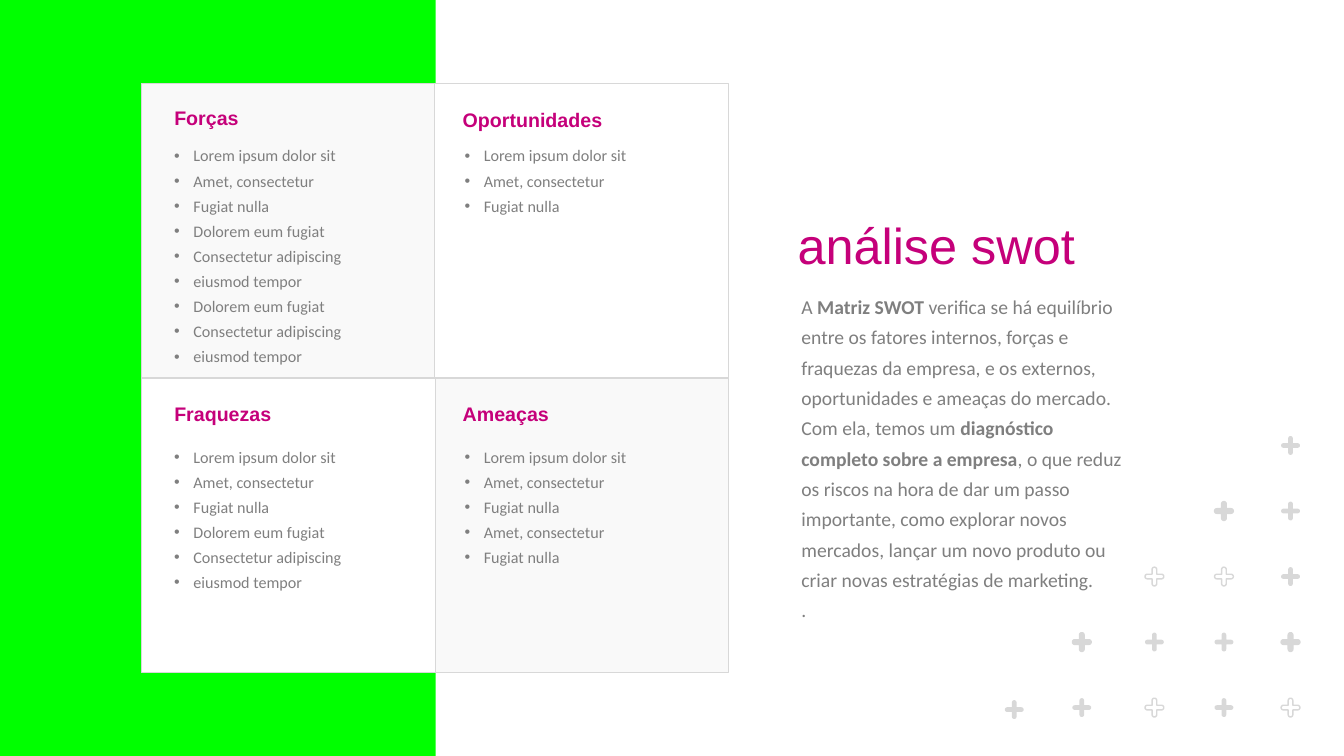
"""Builds the SWOT analysis slide."""
import math

from lxml import etree
from pptx import Presentation
from pptx.dml.color import RGBColor
from pptx.enum.shapes import MSO_SHAPE
from pptx.enum.text import MSO_ANCHOR, MSO_AUTO_SIZE, PP_ALIGN
from pptx.oxml.ns import qn
from pptx.util import Inches, Pt

RECT = MSO_SHAPE.RECTANGLE
TOP = MSO_ANCHOR.TOP
LEFT = PP_ALIGN.LEFT
NO_FIT = MSO_AUTO_SIZE.NONE

GREEN = RGBColor(0x00, 0xFF, 0x00)
MAGENTA = RGBColor(0xC5, 0x00, 0x7A)
GRAY = RGBColor(0x7F, 0x7F, 0x7F)
SILVER = RGBColor(0xD8, 0xD8, 0xD8)
PALE = RGBColor(0xF9, 0xF9, 0xF9)
WHITE = RGBColor(0xFF, 0xFF, 0xFF)

LOREM = ["Lorem ipsum dolor sit", "Amet, consectetur", "Fugiat nulla"]
DOLOREM = ["Dolorem eum fugiat", "Consectetur adipiscing", "eiusmod tempor"]
QUADRANTS = [
    ("Forças", 0, 0, PALE, 1.02, LOREM + DOLOREM * 2),
    ("Oportunidades", 1, 0, WHITE, 1.04, LOREM),
    ("Ameaças", 1, 1, PALE, 3.96, LOREM + LOREM[1:]),
    ("Fraquezas", 0, 1, WHITE, 3.96, LOREM + DOLOREM),
]
BODY = [
    [("A ", False), ("Matriz SWOT ", True),
     ("verifica se há equilíbrio entre os fatores internos, forças e fraquezas "
      "da empresa, e os externos, oportunidades e ameaças do mercado. "
      "Com ela, temos um ", False),
     ("diagnóstico completo sobre a empresa", True),
     (", o que reduz os riscos na hora de dar um passo importante, como explorar "
      "novos mercados, lançar um novo produto ou criar novas estratégias de "
      "marketing.", False)],
    [(".", False)],
]
CROSS_STYLES = {"p": (SILVER, None), "b": (SILVER, SILVER), "o": (WHITE, SILVER)}
CROSS_COLUMNS = [10.73, 11.45, 12.14, 12.8]
CROSS_ROWS = ["...p", "..bp", ".oop", "bppb", "popo"]


class SlideBuilder:
    """Holds the slide and its text style, and draws each kind of element."""

    def __init__(self, prs):
        self.s = prs.slides.add_slide(prs.slide_layouts[5])
        self.heading_font = "Arial"
        self.body_font = "Calibri"

    def paint(self, sp, fill, line, width):
        """Sets the fill and outline of a shape."""
        sp.shadow.inherit = False
        sp.fill.solid()
        sp.fill.fore_color.rgb = fill
        if line is None:
            sp.line.fill.background()
        else:
            sp.line.color.rgb = line
            sp.line.width = Pt(width)

    def rect(self, x, y, w, h, fill, line=None):
        """Draws a rectangle."""
        sp = self.s.shapes.add_shape(RECT, Inches(x), Inches(y), Inches(w), Inches(h))
        self.paint(sp, fill, line, 0.75)

    def run(self, p, text, font, size, color, bold=False):
        """Adds one formatted run to a paragraph."""
        r = p.add_run()
        r.text = text
        r.font.name = font
        r.font.size = Pt(size)
        r.font.bold = bold
        r.font.color.rgb = color

    def title(self, text, x, y, w, h):
        """Places the title placeholder."""
        sp = self.s.shapes.title
        sp.left, sp.top, sp.width, sp.height = Inches(x), Inches(y), Inches(w), Inches(h)
        tf = sp.text_frame
        tf.word_wrap = True
        tf.auto_size = NO_FIT
        tf.vertical_anchor = TOP
        p = tf.paragraphs[0]
        p.alignment = LEFT
        p.line_spacing = 1.0
        self.run(p, text, self.heading_font, 36, MAGENTA)

    def paragraphs(self, x, y, w, h, count, spacing):
        """Adds a wrapping text box and returns its paragraphs."""
        tf = self.s.shapes.add_textbox(Inches(x), Inches(y), Inches(w), Inches(h)).text_frame
        tf.word_wrap = True
        for _ in range(count - 1):
            tf.add_paragraph()
        for p in tf.paragraphs:
            p.line_spacing = spacing
        return tf.paragraphs

    def heading(self, text, x, y):
        """Writes a quadrant heading."""
        p = self.paragraphs(x, y, 1.89, 0.28, 1, 0.93)[0]
        self.run(p, text, self.heading_font, 14, MAGENTA, True)

    def bullets(self, items, x, y):
        """Writes a bulleted list."""
        boxes = self.paragraphs(x, y, 2.07, 0.1 + 0.21 * len(items), len(items), 1.3)
        for p, item in zip(boxes, items):
            pPr = p._p.get_or_add_pPr()
            pPr.set("marL", str(Inches(0.19)))
            pPr.set("indent", str(-Inches(0.19)))
            color = etree.SubElement(pPr, qn("a:buClr"))
            etree.SubElement(color, qn("a:srgbClr"), val=str(GRAY))
            etree.SubElement(pPr, qn("a:buFont"), typeface="Arial")
            etree.SubElement(pPr, qn("a:buChar"), char="•")
            self.run(p, item, self.body_font, 11.5, GRAY)

    def body(self, content, x, y, w, h):
        """Writes running text with bold parts."""
        for p, runs in zip(self.paragraphs(x, y, w, h, len(content), 1.29), content):
            for text, bold in runs:
                self.run(p, text, self.body_font, 14, GRAY, bold)

    def cross(self, x, y, style):
        """Draws a plus sign with round ends, centred on a point."""
        radius, reach = 0.023, 0.07
        points = []
        for turn in range(0, 360, 90):
            c, n = math.cos(math.radians(turn)), math.sin(math.radians(turn))
            arm = [(reach + radius * math.cos(math.radians(a)),
                    radius * math.sin(math.radians(a))) for a in range(-90, 91, 15)]
            points += [(Inches(x + u * c - v * n), Inches(y + u * n + v * c))
                       for u, v in arm + [(radius, radius)]]
        builder = self.s.shapes.build_freeform(*points[0])
        builder.add_line_segments(points[1:], close=True)
        self.paint(builder.convert_to_shape(), *CROSS_STYLES[style], 1)


def main():
    """Builds and saves the slide."""
    prs = Presentation()
    prs.slide_width, prs.slide_height = Inches(13.33), Inches(7.5)
    slide = SlideBuilder(prs)
    slide.rect(0, 0, 4.32, 7.5, GREEN)
    for name, col, row, fill, heading_y, items in QUADRANTS:
        slide.rect(1.4 + 2.91 * col, 0.83 + 2.92 * row, 2.92, 2.92, fill, SILVER)
        slide.heading(name, 1.63 + 2.86 * col, heading_y)
        slide.bullets(items, 1.63 + 2.88 * col, 1.34 + 2.99 * row)
    slide.title("análise swot", 7.81, 2.07, 3.38, 0.71)
    slide.body(BODY, 7.85, 2.81, 3.43, 2.87)
    slide.cross(10.06, 7.04, "p")
    for row, styles in enumerate(CROSS_ROWS):
        for x, style in zip(CROSS_COLUMNS, styles):
            if style in CROSS_STYLES:
                slide.cross(x, 4.42 + 0.65 * row, style)
    prs.save("out.pptx")


if __name__ == "__main__":
    main()
